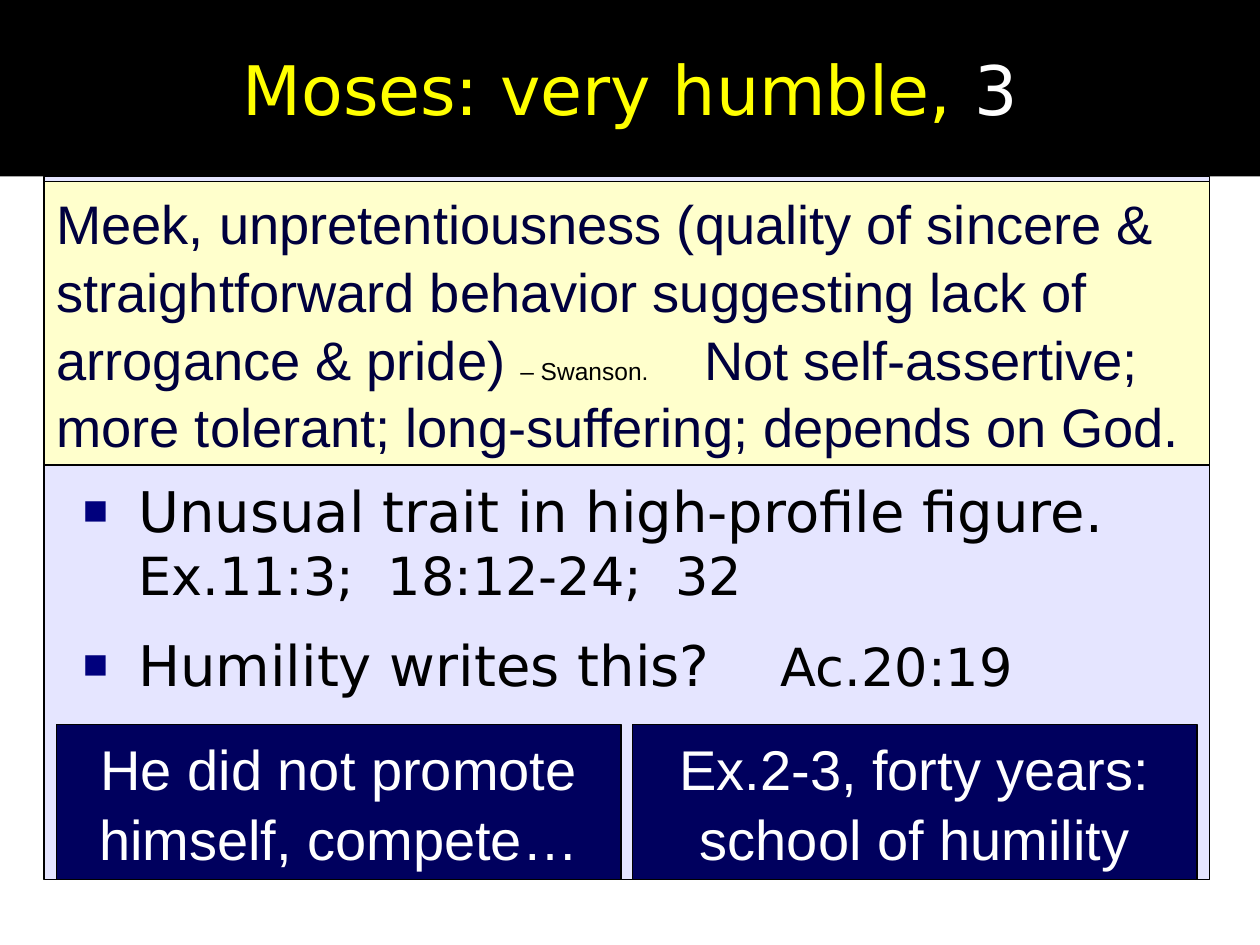
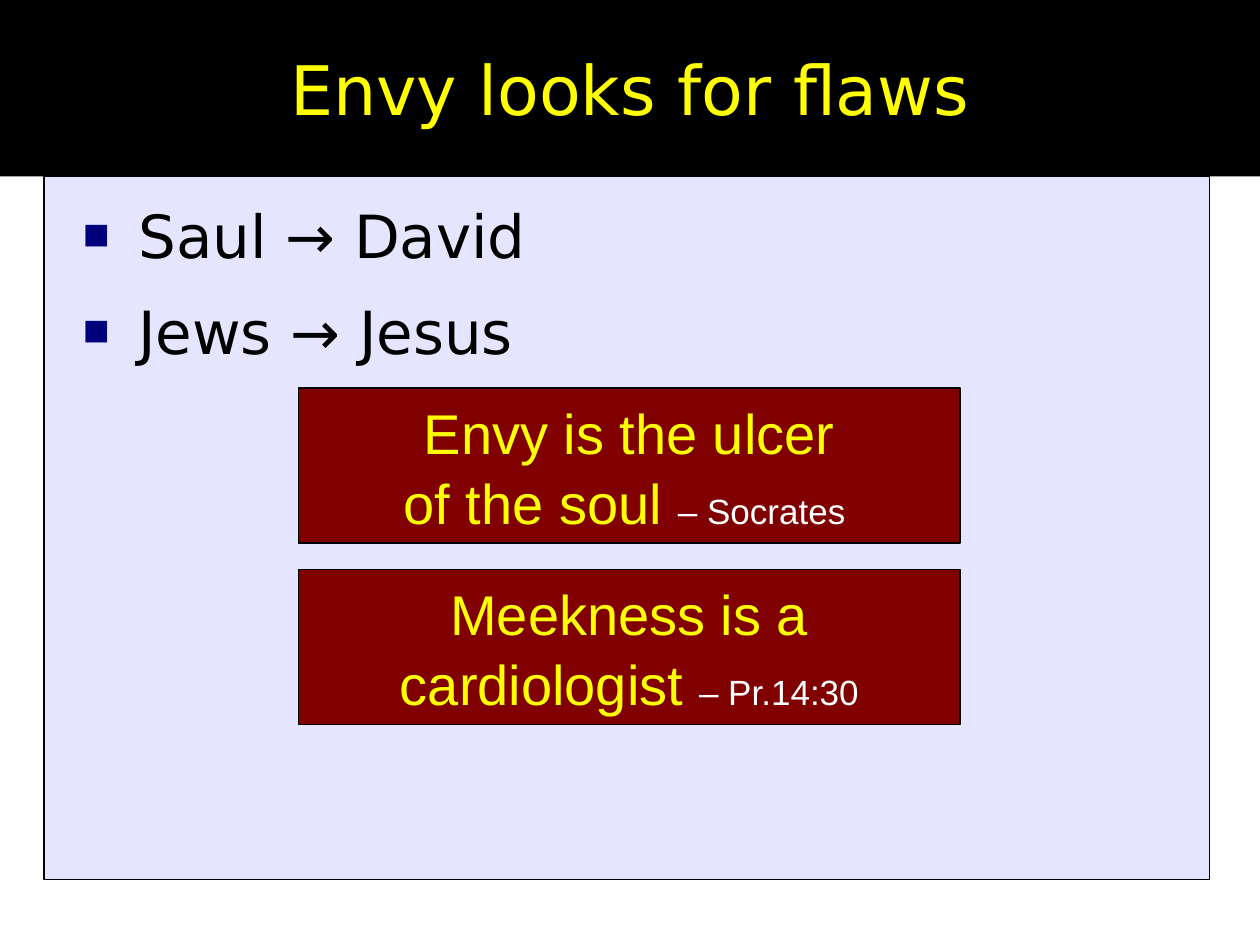
from pptx import Presentation
from pptx.dml.color import RGBColor as Rgb
from pptx.enum.shapes import MSO_SHAPE as Kind
from pptx.enum.text import MSO_ANCHOR as Anchor, PP_ALIGN as Align
from pptx.oxml.ns import qn
from pptx.util import Inches, Pt
from lxml.etree import SubElement as Sub

HUES = {
    "black": "000000", "white": "FFFFFF", "yellow": "FFFF00",
    "lilac": "9999FF", "cream": "FFFFCC", "ink": "00003E",
    "navy": "00005E", "mark": "00007D", "maroon": "800000",
}
SANS, ARIAL = "DejaVu Sans", "Arial"
LEFT, WIDE, BAND, FOOT = 0.35, 9.25, 1.4, 6.98
CARD = 1.23


def hue(name):
    return Rgb.from_string(HUES[name])


def apply(item, form):
    for key, val in form.items():
        setattr(item, key, val)


def node(parent, tag, **attrs):
    return Sub(parent, qn(tag), **attrs)


def write(para, runs, face):
    for text, size, tint in runs:
        for i, line in enumerate(text.split("\n")):
            if i:
                para.add_line_break()
            run = para.add_run()
            run.text = line
            apply(run.font, {"name": face, "size": Pt(size), "bold": False})
            run.font.color.rgb = hue(tint)


def add_tab(para, pos):
    tabs = node(para._p.get_or_add_pPr(), "a:tabLst")
    node(tabs, "a:tab", pos=str(Inches(pos)), algn="l")


def add_mark(para):
    props = para._p.get_or_add_pPr()
    props.set("marL", str(Inches(0.5)))
    props.set("indent", str(Inches(-0.44)))
    tint = node(props, "a:buClr")
    node(tint, "a:srgbClr", val=HUES["mark"])
    node(props, "a:buSzPct", val="75000")
    node(props, "a:buFont", typeface=ARIAL)
    node(props, "a:buChar", char="■")


def add_title(slide, *runs):
    title = slide.shapes.title
    apply(title, {"left": 0, "top": 0, "width": Inches(10), "height": Inches(BAND)})
    title.fill.solid()
    title.fill.fore_color.rgb = hue("black")
    frame = title.text_frame
    apply(frame, {"vertical_anchor": Anchor.MIDDLE, "word_wrap": True})
    para = frame.paragraphs[0]
    para.alignment = Align.CENTER
    write(para, [(text, 39, tint) for text, tint in runs], SANS)


def add_box(slide, x, y, w, h, fill):
    box = slide.shapes.add_shape(Kind.RECTANGLE, *map(Inches, (x, y, w, h)))
    box.shadow.inherit = False
    box.fill.solid()
    box.fill.fore_color.rgb = hue(fill)
    box.line.color.rgb = hue("black")
    box.line.width = Pt(0.75)
    return box


def add_panel(slide):
    box = add_box(slide, LEFT, BAND, WIDE, FOOT - BAND, "lilac")
    tint = box._element.spPr.find(qn("a:solidFill"))[0]
    node(tint, "a:alpha", val="25000")


def add_card(slide, x, y, w, h, fill, runs, align=Align.CENTER, tab=None):
    frame = add_box(slide, x, y, w, h, fill).text_frame
    apply(frame, {"word_wrap": True, "vertical_anchor": Anchor.MIDDLE})
    para = frame.paragraphs[0]
    if tab:
        add_tab(para, tab)
    apply(para, {"alignment": align, "line_spacing": 1.04})
    write(para, runs, ARIAL)


def add_list(slide, y, h, items, tab=None):
    frame = slide.shapes.add_textbox(*map(Inches, (0.5, y, 9, h))).text_frame
    frame.word_wrap = True
    for i, runs in enumerate(items):
        para = frame.add_paragraph() if i else frame.paragraphs[0]
        add_mark(para)
        if tab and any("\t" in run[0] for run in runs):
            add_tab(para, tab)
        apply(para, {"space_before": Pt(8 if i else 0), "space_after": Pt(6)})
        write(para, runs, SANS)


def start(deck, *title):
    slide = deck.slides.add_slide(deck.slide_layouts[5])
    add_title(slide, *title)
    add_panel(slide)
    return slide


def moses(deck):
    slide = start(deck, ("Moses: very humble, ", "yellow"), ("3", "white"))
    add_list(slide, 3.73, 1.9, [
        [("Unusual trait in high-profile figure. ", 32, "black"),
         ("Ex.11:3;  18:12-24;  32", 30, "black")],
        [("Humility writes this?\t", 32, "black"), ("Ac.20:19", 30, "black")],
    ], tab=5.6)
    add_card(slide, LEFT, 1.44, WIDE, 2.25, "cream", [
        ("Meek, unpretentiousness (quality of sincere & straightforward "
         "behavior suggesting lack of arrogance & pride) ", 31, "ink"),
        ("– Swanson.\t", 14, "black"),
        ("Not self-assertive; more tolerant; long-suffering; "
         "depends on God.", 31, "ink"),
    ], Align.LEFT, tab=5.14)
    notes = ("He did not promote himself, compete…",
             "Ex.2-3, forty years: school of humility")
    for i, text in enumerate(notes):
        add_card(slide, 0.45 + i * 4.57, FOOT - CARD, 4.48, CARD, "navy",
                 [(text, 32, "white")])


def envy(deck):
    slide = start(deck, ("Envy looks for flaws", "yellow"))
    pairs = ("Saul → David", "Jews → Jesus")
    add_list(slide, 1.53, 1.5, [[(text, 34, "black")] for text in pairs])
    quotes = (("Envy is the ulcer\nof the soul ", "– Socrates "),
              ("Meekness is a\ncardiologist ", "– Pr.14:30"))
    for i, (text, source) in enumerate(quotes):
        add_card(slide, 2.37, 3.08 + i * 1.44, 5.25, CARD, "maroon",
                 [(text, 32, "yellow"), (source, 20, "white")])


def main():
    deck = Presentation()
    apply(deck, {"slide_width": Inches(10), "slide_height": Inches(7.5)})
    moses(deck)
    envy(deck)
    deck.save("out.pptx")


if __name__ == "__main__":
    main()
